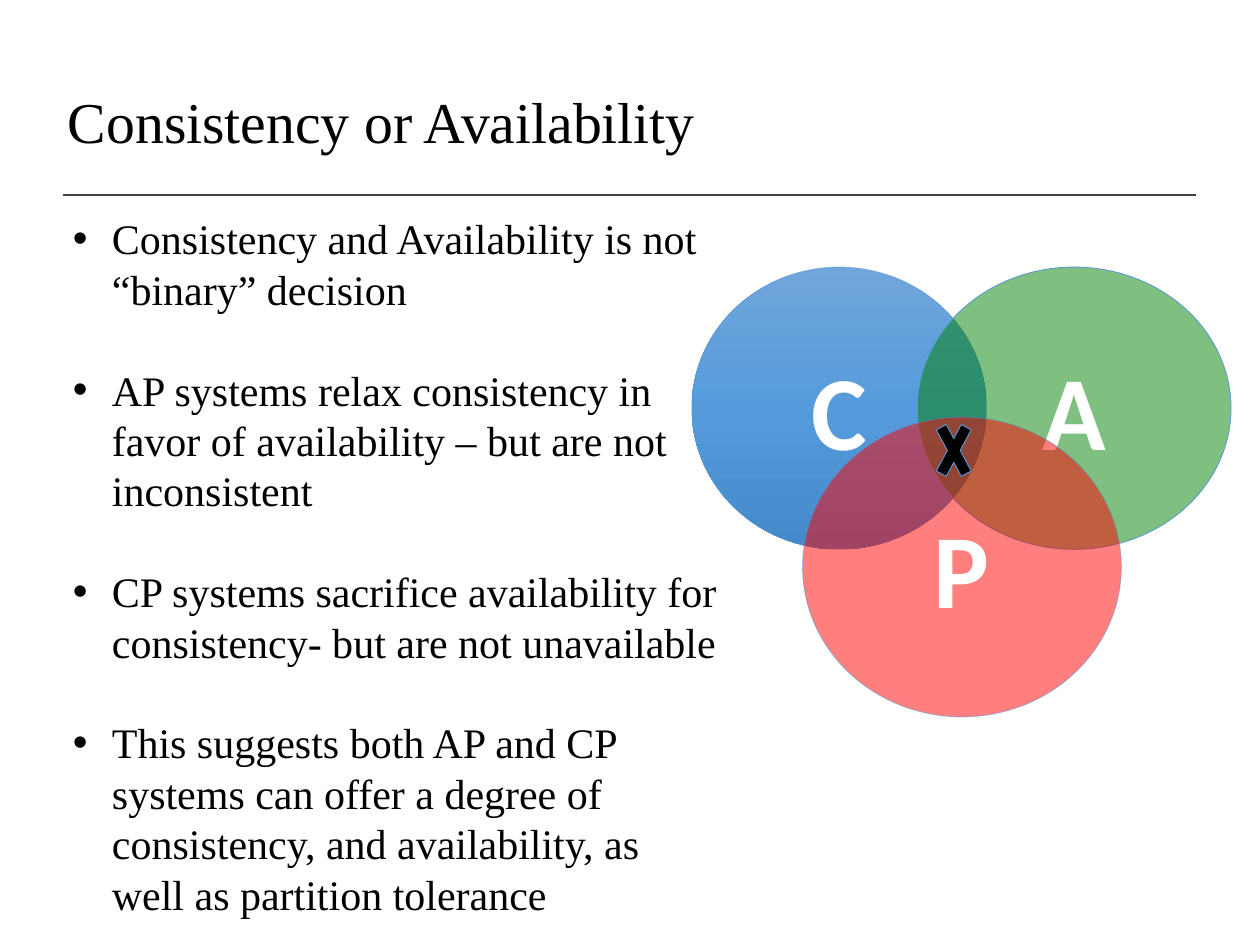
"""Slide on consistency versus availability, with a three-circle Venn diagram."""
from lxml import etree
from pptx import Presentation
from pptx.dml.color import RGBColor
from pptx.enum.shapes import MSO_CONNECTOR, MSO_SHAPE
from pptx.enum.text import MSO_ANCHOR, PP_ALIGN
from pptx.oxml.ns import qn
from pptx.util import Inches, Pt

STRAIGHT = MSO_CONNECTOR.STRAIGHT
OVAL, CROSS = MSO_SHAPE.OVAL, MSO_SHAPE.MATH_MULTIPLY
TOP, MIDDLE = MSO_ANCHOR.TOP, MSO_ANCHOR.MIDDLE
LEFT, CENTER = PP_ALIGN.LEFT, PP_ALIGN.CENTER
SERIF, SANS = "Times New Roman", "Calibri"

TITLE = "Consistency or Availability"
BULLETS = [
    "Consistency and Availability is not “binary” decision",
    "AP systems relax consistency in favor of availability – but are not inconsistent",
    "CP systems sacrifice availability for consistency- but are not unavailable",
    "This suggests both AP and CP systems can offer a degree of consistency, "
    "and availability, as well as partition tolerance",
]
BLUES = [(0, "71A6DB"), (50, "559BDB"), (100, "448ACA")]
VENN = [
    dict(kind=OVAL, box=(5.49, 2.12, 2.34, 2.24), stops=BLUES, line="5698D3", line_alpha=50, text="C"),
    dict(kind=OVAL, box=(7.28, 2.12, 2.49, 2.24), fill="008000", alpha=50, text="A"),
    dict(kind=OVAL, box=(6.37, 3.31, 2.53, 2.38), fill="FF0000", alpha=50, line="5698D3", line_alpha=50, text="P"),
    dict(kind=CROSS, box=(7.38, 3.22, 0.38, 0.71), fill="000000"),
]


def rgb(color):
    return RGBColor.from_string(color)


def set_alpha(fill, percent):
    color = next(fill._xPr.iter(qn("a:srgbClr")))
    etree.SubElement(color, qn("a:alpha"), val=str(percent * 1000))


def set_gradient(fill, stops):
    fill.gradient()
    fill.gradient_angle = 270
    stop_list = next(fill._xPr.iter(qn("a:gsLst")))
    for old in list(stop_list):
        stop_list.remove(old)
    for position, color in stops:
        stop = etree.SubElement(stop_list, qn("a:gs"), pos=str(position * 1000))
        etree.SubElement(stop, qn("a:srgbClr"), val=color)


def write(s, texts, size, font=SERIF, color="000000", bold=False, align=LEFT,
          anchor=TOP, spacing=None, gap=0, indent=0, inset=0.05):
    tf = s.text_frame
    tf.word_wrap, tf.vertical_anchor, tf.margin_top = True, anchor, Inches(inset)
    for i, text in enumerate(texts):
        p = tf.paragraphs[0] if i == 0 else tf.add_paragraph()
        p.alignment, p.line_spacing = align, spacing
        p.space_before = Pt(gap if i else 0)
        if indent:
            pPr = p._p.get_or_add_pPr()
            pPr.set("marL", str(Inches(indent)))
            pPr.set("indent", str(-Inches(indent)))
            etree.SubElement(pPr, qn("a:buFont"), typeface="Arial")
            etree.SubElement(pPr, qn("a:buChar"), char="•")
        r = p.add_run()
        r.text = text
        r.font.name, r.font.size, r.font.bold = font, Pt(size), bold
        r.font.color.rgb = rgb(color)


def add_text(slide, box, texts, **fmt):
    write(slide.shapes.add_textbox(*map(Inches, box)), texts, **fmt)


def add_part(group, kind, box, fill=None, stops=None, alpha=None,
             line="5B9BD5", line_alpha=None, text=None):
    s = group.shapes.add_shape(kind, *map(Inches, box))
    s.shadow.inherit = False
    if stops:
        set_gradient(s.fill, stops)
    else:
        s.fill.solid()
        s.fill.fore_color.rgb = rgb(fill)
    if alpha:
        set_alpha(s.fill, alpha)
    s.line.color.rgb = rgb(line)
    s.line.width = Pt(0.5)
    if line_alpha:
        set_alpha(s.line.fill, line_alpha)
    if text:
        write(s, [text], size=60, font=SANS, color="FFFFFF", bold=True, align=CENTER, anchor=MIDDLE)


def add_rule(slide, left, right, y):
    rule = slide.shapes.add_connector(STRAIGHT, *map(Inches, (left, y, right, y)))
    rule.line.color.rgb = rgb("404040")
    rule.line.width = Pt(1)
    etree.SubElement(rule._element.spPr, qn("a:effectLst"))


def main():
    prs = Presentation()
    prs.slide_width, prs.slide_height = Inches(10), Inches(7.5)
    slide = prs.slides.add_slide(prs.slide_layouts[6])
    add_rule(slide, 0.5, 9.49, 1.55)
    add_text(slide, (0.44, 0.47, 9.33, 1.04), [TITLE], size=33, anchor=MIDDLE, spacing=0.9)
    venn = slide.shapes.add_group_shape()
    for part in VENN:
        add_part(venn, **part)
    add_text(slide, (0.48, 1.62, 5.35, 5.76), BULLETS, size=24, spacing=Pt(28.8),
             gap=28.8, indent=0.31, inset=0.07)
    prs.save("out.pptx")


if __name__ == "__main__":
    main()
